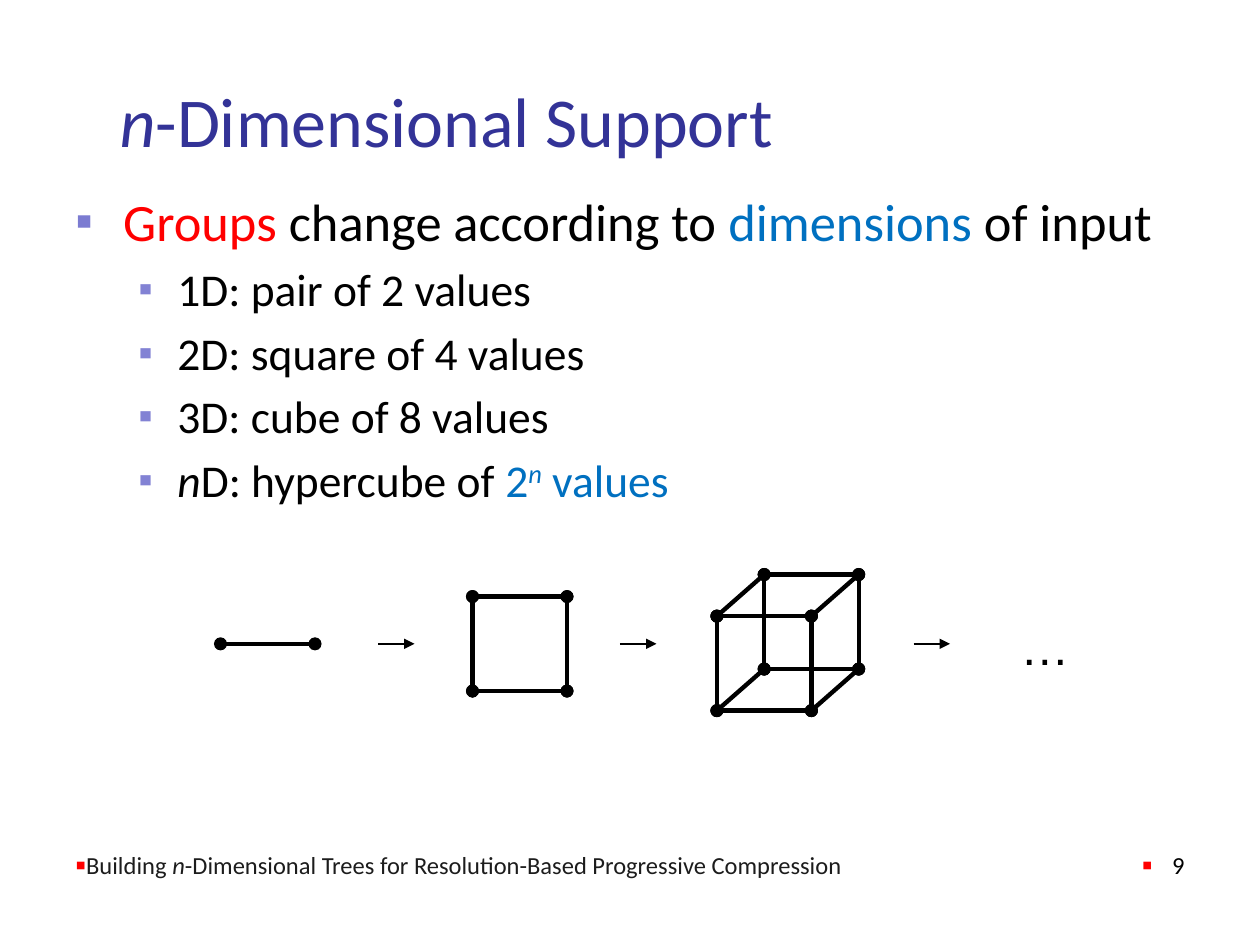
import itertools
import pptx
import pptx.util
import pptx.dml.color
import pptx.enum.shapes
import pptx.enum.text
import pptx.oxml.ns
import lxml.etree

Pt = pptx.util.Pt
RGB = pptx.dml.color.RGBColor
ALIGN = pptx.enum.text.PP_ALIGN
ANCHOR = pptx.enum.text.MSO_ANCHOR
BLACK = RGB(0x00, 0x00, 0x00)
NAVY = RGB(0x33, 0x33, 0x97)
RED = RGB(0xFF, 0x00, 0x00)
BLUE = RGB(0x00, 0x70, 0xC0)
GREY = RGB(0x1C, 0x1C, 0x1C)
LILAC = RGB(0x7B, 0x7B, 0xD1)
PALE = RGB(0x82, 0x82, 0xD4)
CELL = pptx.util.Inches(0.25)
SIDE = 3


def grid(*vals):
    return [round(v * CELL) for v in vals]


def add_tag(node, tag, **attrs):
    return lxml.etree.SubElement(node, pptx.oxml.ns.qn(tag), attrs)


def add_mark(para, color, size, left, hang):
    props = para._p.get_or_add_pPr()
    props.set("marL", str(pptx.util.Inches(left)))
    props.set("indent", str(pptx.util.Inches(-hang)))
    add_tag(add_tag(props, "a:buClr"), "a:srgbClr", val=str(color))
    add_tag(props, "a:buSzPct", val=str(size * 1000))
    add_tag(props, "a:buFont", typeface="Arial")
    add_tag(props, "a:buChar", char="▪")


def write(para, parts, size, color, face="Calibri"):
    for text, style, tint in parts:
        run = para.add_run()
        run.text = text
        font = run.font
        font.size, font.name = Pt(size), face
        font.color.rgb = tint or color
        font.italic = "i" in style
        if "^" in style:
            run._r.get_or_add_rPr().set("baseline", "30000")


def add_box(slide, box, anchor=ANCHOR.TOP):
    frame = slide.shapes.add_textbox(*grid(*box)).text_frame
    frame.word_wrap = True
    frame.vertical_anchor = anchor
    return frame


def add_title(slide, box):
    title = slide.shapes.title
    title.left, title.top, title.width, title.height = grid(*box)
    frame = title.text_frame
    frame.margin_left = pptx.util.Inches(0.45)
    frame.vertical_anchor = ANCHOR.MIDDLE
    para = frame.paragraphs[0]
    para.alignment = ALIGN.LEFT
    write(para, [("n", "i", None), ("-Dimensional Support", "", None)], 40, NAVY)


def add_body(slide, box):
    frame = add_box(slide, box)
    head = frame.paragraphs[0]
    add_mark(head, LILAC, 95, 0.38, 0.38)
    write(head, [("Groups", "", RED), (" change according to ", "", None),
                 ("dimensions", "", BLUE), (" of input", "", None)], 30, BLACK)
    items = [[(text, "", None)] for text in (
        "1D: pair of 2 values", "2D: square of 4 values", "3D: cube of 8 values")]
    items.append([("n", "i", None), ("D: hypercube of ", "", None), ("2", "", BLUE),
                  ("n", "i^", BLUE), (" values", "", BLUE)])
    for parts in items:
        para = frame.add_paragraph()
        para.level = 1
        add_mark(para, PALE, 90, 0.81, 0.31)
        para.space_before = Pt(5.2)
        write(para, parts, 26, BLACK)


def add_foot(slide, box):
    left, top, width, height = box
    split = width * 0.77
    note = add_box(slide, (left, top, split, height), ANCHOR.BOTTOM).paragraphs[0]
    add_mark(note, RED, 125, 0, 0)
    write(note, [("Building ", "", None), ("n", "i", None),
                 ("-Dimensional Trees for Resolution-Based Progressive Compression",
                  "", None)], 14, GREY)
    page = add_box(slide, (left + split, top, width - split, height),
                   ANCHOR.BOTTOM).paragraphs[0]
    page.alignment = ALIGN.RIGHT
    add_mark(page, RED, 125, 0.24, 0.24)
    write(page, [("9", "", None)], 14, BLACK)


def add_line(slide, start, end, width, tail, head=None):
    line = slide.shapes.add_connector(
        pptx.enum.shapes.MSO_CONNECTOR.STRAIGHT, *grid(*start, *end))
    line.line.color.rgb = BLACK
    line.line.width = Pt(width)
    stroke = line.line._get_or_add_ln()
    if head:
        add_tag(stroke, "a:headEnd", type=head)
    add_tag(stroke, "a:tailEnd", type=tail)
    add_tag(line._element.spPr, "a:effectLst")


def add_cube(slide, left, top, axes):
    for ends in itertools.product((0, 1), repeat=len(axes)):
        x = left + sum(bit * axis[0] for bit, axis in zip(ends, axes))
        y = top + sum(bit * axis[1] for bit, axis in zip(ends, axes))
        for bit, (dx, dy) in zip(ends, axes):
            if not bit:
                add_line(slide, (x, y), (x + dx, y + dy), 2.5, "oval", "oval")


def add_chain(slide, box):
    left, top, width, height = box
    mid = top + height / 2
    axes = [(SIDE, 0), (0, SIDE), (SIDE / 2, -1.32)]
    starts = [(0, mid), (8, mid - SIDE / 2), (15.76, top + 1.32)]
    for count, (x, y) in enumerate(starts, 1):
        add_cube(slide, left + x, y, axes[:count])
    for x in (5, 12.68, 22):
        add_line(slide, (left + x, mid), (left + x + 1.16, mid), 1.5, "triangle")
    dots = add_box(slide, (left + width - 2.32, mid - 1.08, 2.32, 2.28))
    write(dots.paragraphs[0], [("…", "", None)], 28, BLACK, "Arial")


def main():
    deck = pptx.Presentation()
    deck.slide_width, deck.slide_height = grid(40, 30)
    slide = deck.slides.add_slide(deck.slide_layouts[5])
    add_title(slide, (2, 2.4, 36, 2.8))
    add_body(slide, (2, 5.8, 36, 19.6))
    add_foot(slide, (2, 26.12, 36, 2))
    add_chain(slide, (7, 18.24, 27.32, 4.4))
    deck.save("out.pptx")


if __name__ == "__main__":
    main()
